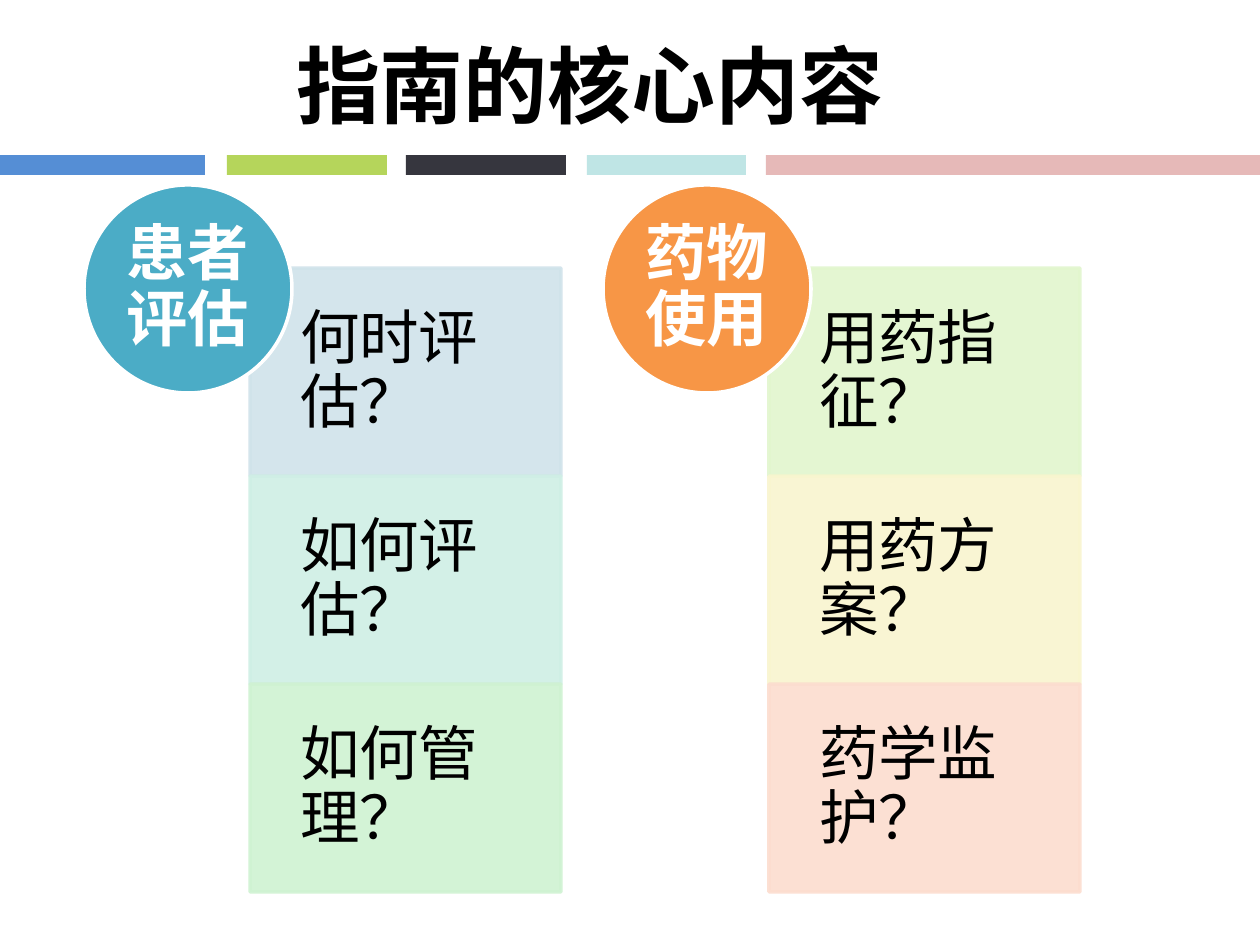
import pptx
import pptx.util
from pptx.dml.color import RGBColor
from pptx.enum.shapes import MSO_SHAPE
from pptx.enum.text import MSO_ANCHOR, PP_ALIGN
from pptx.oxml.ns import qn
from lxml import etree

PX = 914400 / 126
BLACK = RGBColor(0, 0, 0)
WHITE = RGBColor(255, 255, 255)
TEAL = RGBColor(0x4B, 0xAC, 0xC6)
ORANGE = RGBColor(0xF7, 0x96, 0x46)
BARS = [
    (0, 205, RGBColor(0x55, 0x8E, 0xD5)),
    (227, 160, RGBColor(0xB5, 0xD5, 0x5B)),
    (406, 160, RGBColor(0x36, 0x36, 0x3E)),
    (587, 159, RGBColor(0xBF, 0xE5, 0xE5)),
    (766, 494, RGBColor(0xE6, 0xB9, 0xB8)),
]
ASSESSMENT = [
    ("何时评估？", RGBColor(0xD0, 0xE3, 0xEA)),
    ("如何评估？", RGBColor(0xCF, 0xEF, 0xE5)),
    ("如何管理？", RGBColor(0xCF, 0xF2, 0xD2)),
]
MEDICATION = [
    ("用药指征？", RGBColor(0xE2, 0xF6, 0xCE)),
    ("用药方案？", RGBColor(0xF9, 0xF5, 0xCF)),
    ("药学监护？", RGBColor(0xFC, 0xDD, 0xCF)),
]


def emu(px):
    """Turn px into EMU."""
    return pptx.util.Emu(round(px * PX))


def add_box(s, kind, x, y, w, h, fill, line=None):
    """Add a filled shape, outlined when a line colour is given."""
    sp = s.shapes.add_shape(kind, emu(x), emu(y), emu(w), emu(h))
    sp.shadow.inherit = False
    sp.fill.solid()
    sp.fill.fore_color.rgb = fill
    if line is None:
        sp.line.fill.background()
    else:
        sp.line.color.rgb = line
        sp.line.width = pptx.util.Pt(2)
    return sp


def write(tf, text, size, font, color, bold, align, insets):
    """Write one wrapped, vertically centred paragraph."""
    tf.word_wrap = True
    tf.vertical_anchor = MSO_ANCHOR.MIDDLE
    tf.margin_left, tf.margin_top, tf.margin_right, tf.margin_bottom = map(emu, insets)
    p = tf.paragraphs[0]
    p.alignment = align
    p.line_spacing = 0.9
    r = p.add_run()
    r.text = text
    r.font.size = pptx.util.Pt(size)
    r.font.bold = bold
    r.font.color.rgb = color
    r.font.name = font
    ea = etree.Element(qn("a:ea"), typeface=font)
    r.font._element.find(qn("a:latin")).addnext(ea)


def add_title(s, x, y, w, h):
    """Place the slide title in its placeholder."""
    sp = s.shapes.title
    sp.left, sp.top, sp.width, sp.height = map(emu, (x, y, w, h))
    write(sp.text_frame, "指南的核心内容", 48, "Noto Sans CJK SC", BLACK, True,
          PP_ALIGN.CENTER, (13, 6, 13, 6))
    sp.text_frame.paragraphs[0].line_spacing = 1.0


def add_bars(s, x, y, h):
    """Draw the row of coloured bars under the title."""
    for left, w, color in BARS:
        add_box(s, MSO_SHAPE.RECTANGLE, x + left, y, w, h, color)


def add_column(s, x, y, heading, color, tiles):
    """Stack the question tiles and overlap them with a heading circle."""
    side = 208
    for i, (text, fill) in enumerate(tiles):
        sp = add_box(s, MSO_SHAPE.RECTANGLE, x + 166, y + 83 + i * side, 311, side, fill, fill)
        for clr in sp._element.spPr.iter(qn("a:srgbClr")):
            etree.SubElement(clr, qn("a:alpha"), val="90000")
        write(sp.text_frame, text, 34, "Calibri", BLACK, False,
              PP_ALIGN.LEFT, (50, 33, 33, 33))
    sp = add_box(s, MSO_SHAPE.OVAL, x, y, side, side, color, WHITE)
    write(sp.text_frame, heading, 35, "Calibri", WHITE, True,
          PP_ALIGN.CENTER, (0, 0, 0, 0))


def main():
    """Build and save the slide."""
    prs = pptx.Presentation()
    prs.slide_width, prs.slide_height = emu(1260), emu(945)
    s = prs.slides.add_slide(prs.slide_layouts[5])
    add_bars(s, 0, 155, 20)
    add_title(s, 203, 26, 774, 115)
    add_column(s, 84, 185, "患者评估", TEAL, ASSESSMENT)
    add_column(s, 603, 185, "药物使用", ORANGE, MEDICATION)
    prs.save("out.pptx")


if __name__ == "__main__":
    main()
